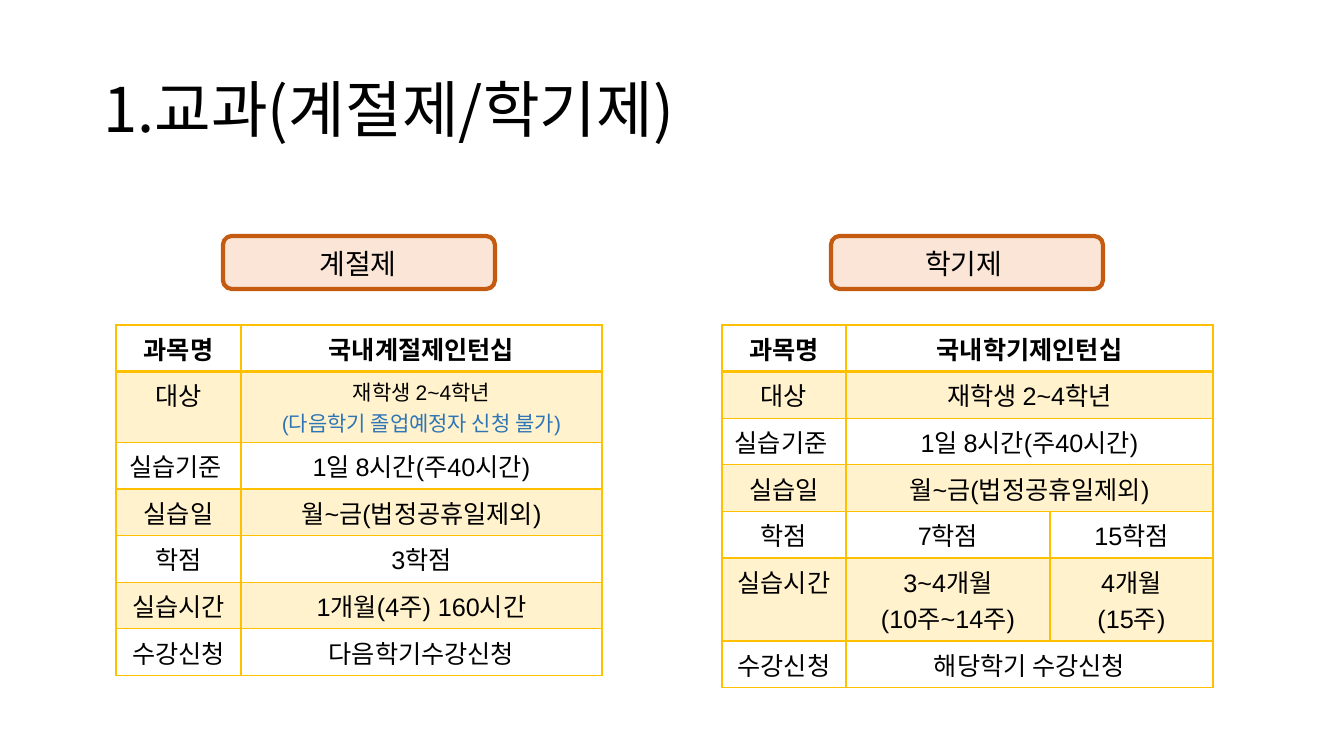
from lxml.etree import SubElement
from pptx import Presentation
from pptx.dml.color import RGBColor
from pptx.enum.shapes import MSO_SHAPE as Shape
from pptx.enum.text import MSO_ANCHOR as Anchor, MSO_AUTO_SIZE as AutoSize, PP_ALIGN as Align
from pptx.oxml.ns import qn
from pptx.util import Pt

PX = 914400 / 100.8
KOREAN = "Noto Sans CJK KR"
AMBER = "FFC000"
ROW = 46

SEASON_ROWS = [
    ["과목명", "국내계절제인턴십"],
    ["대상", [("재학생 2~4학년", "000000"), ("(다음학기 졸업예정자 신청 불가)", "2E75B6")]],
    ["실습기준 ", "1일 8시간(주40시간)"],
    ["실습일", "월~금(법정공휴일제외)"],
    ["학점", "3학점"],
    ["실습시간", "1개월(4주) 160시간"],
    ["수강신청", "다음학기수강신청"],
]
SEMESTER_ROWS = [
    ["과목명", "국내학기제인턴십"],
    ["대상", "재학생 2~4학년"],
    ["실습기준 ", "1일 8시간(주40시간)"],
    ["실습일", "월~금(법정공휴일제외)"],
    ["학점", "7학점", "15학점"],
    ["실습시간", "3~4개월\n(10주~14주)", "4개월\n(15주)"],
    ["수강신청", "해당학기 수강신청"],
]


def px(length):
    return round(length * PX)


def color(code):
    return RGBColor.from_string(code)


def place(shape, left, top, width, height):
    shape.left, shape.top, shape.width, shape.height = map(px, (left, top, width, height))


def write(para, text, *, size, font=KOREAN, ink="000000", bold=False, align=Align.CENTER, spacing=1.0):
    para.alignment = align
    para.line_spacing = spacing
    para.space_before = Pt(0)
    span = para.add_run()
    span.text = text
    span.font.size = Pt(size)
    span.font.bold = bold
    span.font.color.rgb = color(ink)
    span.font.name = font
    SubElement(span.font._element, qn("a:ea"), typeface=KOREAN)


def add_title(page, text):
    title = page.shapes.title
    place(title, 93, 40, 1159, 146)
    title.text_frame.vertical_anchor = Anchor.MIDDLE
    title.text_frame.auto_size = AutoSize.NONE
    write(title.text_frame.paragraphs[0], text, size=44, align=Align.LEFT, spacing=0.9)


def add_label(page, index, text, left, width):
    label = page.placeholders[index]
    place(label, left, 202, width, 480)
    frame = label.text_frame
    frame.auto_size = AutoSize.NONE
    frame.margin_top = px(48)
    para = frame.paragraphs[0]
    write(para, text, size=20, spacing=0.9)
    props = para._p.get_or_add_pPr()
    props.set("marL", "0")
    props.set("indent", "0")
    SubElement(props, qn("a:buNone"))


def add_pill(page, left):
    pill = page.shapes.add_shape(Shape.ROUNDED_RECTANGLE, px(left), px(236), px(272), px(53))
    pill.shadow.inherit = False
    pill.fill.solid()
    pill.fill.fore_color.rgb = color("FBE5D6")
    pill.line.color.rgb = color("C55A11")
    pill.line.width = Pt(3)
    page.shapes.title.element.addprevious(pill.element)


def style_cell(cell, row):
    props = cell._tc.get_or_add_tcPr()
    widths = {"lnL": 1, "lnR": 1, "lnT": 2 if row == 1 else 1, "lnB": 2 if row == 0 else 1}
    for side, width in widths.items():
        line = SubElement(props, qn(f"a:{side}"), w=str(Pt(width)))
        fill = SubElement(line, qn("a:solidFill"))
        SubElement(fill, qn("a:srgbClr"), val=AMBER)
    if row % 2:
        cell.fill.solid()
        cell.fill.fore_color.rgb = color(AMBER)
        tint = props.find(qn("a:solidFill")).find(qn("a:srgbClr"))
        SubElement(tint, qn("a:alpha"), val="20000")
    else:
        cell.fill.background()


def fill_cell(cell, content, bold):
    if isinstance(content, str):
        lines, size = [(text, "000000") for text in content.split("\n")], 18
    else:
        lines, size = content, 15
    frame = cell.text_frame
    for number, (text, ink) in enumerate(lines):
        para = frame.add_paragraph() if number else frame.paragraphs[0]
        write(para, text, size=size, font="Arial", ink=ink, bold=bold)


def add_course_table(page, rows, left, widths, tall_row, tall_height):
    frame = page.shapes.add_table(
        len(rows), len(widths), px(left), px(325), px(sum(widths)),
        px(ROW * (len(rows) - 1) + tall_height))
    table = frame.table
    table.first_row = table.horz_banding = False
    for column, width in zip(table.columns, widths):
        column.width = px(width)
    for r, contents in enumerate(rows):
        table.rows[r].height = px(tall_height if r == tall_row else ROW)
        for c in range(len(widths)):
            style_cell(table.cell(r, c), r)
        if len(contents) < len(widths):
            table.cell(r, 1).merge(table.cell(r, len(widths) - 1))
        for c, content in enumerate(contents):
            fill_cell(table.cell(r, c), content, bold=r == 0)


def main():
    deck = Presentation()
    deck.slide_width, deck.slide_height = px(1344), px(756)
    page = deck.slides.add_slide(deck.slide_layouts[3])
    add_title(page, "1.교과(계절제/학기제)")
    for left in (831, 223):
        add_pill(page, left)
    add_label(page, 1, "계절제", 92, 532)
    add_label(page, 2, "학기제 ", 682, 570)
    add_course_table(page, SEASON_ROWS, 116, [125, 361], 1, 70)
    add_course_table(page, SEMESTER_ROWS, 722, [124, 204, 163], 5, 83)
    deck.save("out.pptx")


if __name__ == "__main__":
    main()
